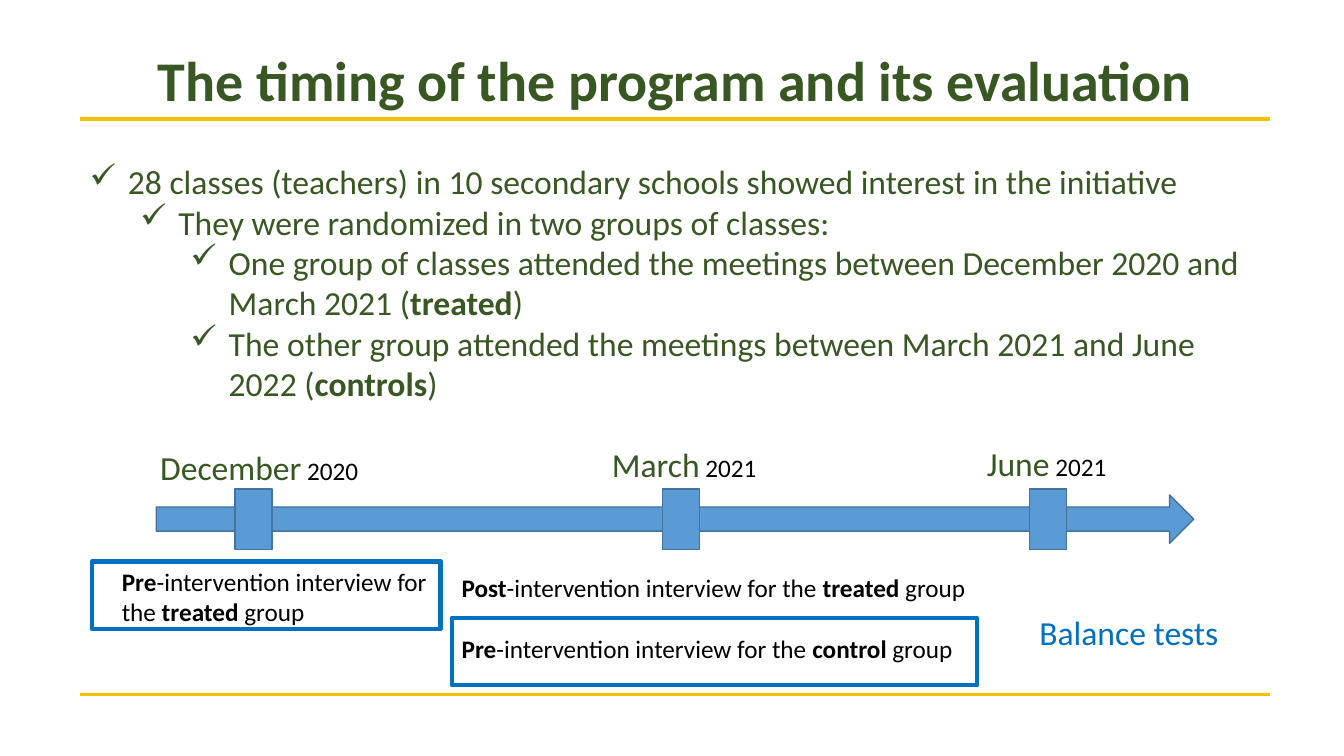
from dataclasses import dataclass

from lxml.etree import SubElement
from pptx import Presentation
from pptx.dml.color import RGBColor
from pptx.enum.shapes import MSO_CONNECTOR, MSO_SHAPE
from pptx.enum.text import MSO_ANCHOR, PP_ALIGN
from pptx.oxml.ns import qn
from pptx.util import Inches, Pt


@dataclass(frozen=True)
class Theme:
    """Colours, font and type sizes of the slide."""
    font: str = "Calibri"
    green: str = "385723"
    gold: str = "FFC000"
    blue: str = "5B9BD5"
    edge: str = "43739E"
    frame: str = "0070C0"
    black: str = "000000"
    title: int = 40
    body: int = 24
    note: int = 18


class Deck:
    """Draws styled elements on the current slide."""

    def __init__(self, theme):
        """Start a wide presentation with one blank slide."""
        self.theme = theme
        self.prs = Presentation()
        self.prs.slide_width, self.prs.slide_height = Inches(13.33), Inches(7.5)
        self.s = self.prs.slides.add_slide(self.prs.slide_layouts[6])

    def runs(self, p, text, size, color):
        """Add text to a paragraph, with the parts between asterisks in bold."""
        for i, part in enumerate(text.split("*")):
            if part:
                r = p.add_run()
                r.text = part
                r.font.name = self.theme.font
                r.font.size = Pt(size)
                r.font.bold = i % 2 == 1
                r.font.color.rgb = RGBColor.from_string(color)

    def text(self, x, y, w, h, lines, size, color):
        """Add a wrapping text box with one paragraph per line."""
        tf = self.s.shapes.add_textbox(Inches(x), Inches(y), Inches(w), Inches(h)).text_frame
        tf.word_wrap = True
        for i, line in enumerate(lines):
            p = tf.add_paragraph() if i else tf.paragraphs[0]
            self.runs(p, line, size, color)
        return tf

    def title(self, x, y, w, h, text):
        """Add the centred slide title."""
        tf = self.text(x, y, w, h, [f"*{text}*"], self.theme.title, self.theme.green)
        tf.vertical_anchor = MSO_ANCHOR.BOTTOM
        tf.margin_bottom = Inches(0.12)
        tf.paragraphs[0].alignment = PP_ALIGN.CENTER
        tf.paragraphs[0].line_spacing = 0.9

    def checklist(self, x, y, w, h, items):
        """Add check-marked paragraphs from (level, text) pairs."""
        tf = self.text(x, y, w, h, [text for _, text in items], self.theme.body, self.theme.green)
        for p, (level, _) in zip(tf.paragraphs, items):
            p.level = level
            pPr = p._p.get_or_add_pPr()
            pPr.set("marL", str(Inches(0.38 + 0.5 * level)))
            pPr.set("indent", str(-Inches(0.38)))
            SubElement(pPr, qn("a:buChar")).set("char", "✓")

    def rule(self, x1, x2, y):
        """Add a horizontal gold line."""
        c = self.s.shapes.add_connector(
            MSO_CONNECTOR.STRAIGHT, Inches(x1), Inches(y), Inches(x2), Inches(y))
        c.line.color.rgb = RGBColor.from_string(self.theme.gold)
        c.line.width = Pt(2.25)
        SubElement(c._element.spPr, qn("a:effectLst"))

    def shape(self, kind, x, y, w, h, line, width, fill=None):
        """Add an outlined preset shape, filled when a fill is given."""
        sp = self.s.shapes.add_shape(kind, Inches(x), Inches(y), Inches(w), Inches(h))
        sp.shadow.inherit = False
        sp.line.color.rgb = RGBColor.from_string(line)
        sp.line.width = Pt(width)
        if fill:
            sp.fill.solid()
            sp.fill.fore_color.rgb = RGBColor.from_string(fill)
        else:
            sp.fill.background()

    def bar(self, kind, x, y, w, h):
        """Add a blue timeline part."""
        self.shape(kind, x, y, w, h, self.theme.edge, 1, self.theme.blue)

    def box(self, x, y, w, h):
        """Add an empty blue frame."""
        self.shape(MSO_SHAPE.RECTANGLE, x, y, w, h, self.theme.frame, 3)

    def date(self, x, y, w, month, year):
        """Add a milestone label with a large month and a small year."""
        tf = self.text(x, y, w, 0.5, [month], self.theme.body, self.theme.green)
        self.runs(tf.paragraphs[0], f" {year}", self.theme.note, self.theme.black)


def main():
    """Build and save the slide."""
    theme = Theme()
    deck = Deck(theme)
    left, width = 0.79, 11.81

    deck.title(left, 0, width, 1.25, "The timing of the program and its evaluation")
    for y in (1.18, 6.89):
        deck.rule(left, left + width, y)
    deck.checklist(left, 1.55, width, 3.33, [
        (0, "28 classes (teachers) in 10 secondary schools showed interest in the initiative"),
        (1, "They were randomized in two groups of classes:"),
        (2, "One group of classes attended the meetings between December 2020 and March 2021 (*treated*)"),
        (2, "The other group attended the meetings between March 2021 and June 2022 (*controls*)"),
    ])

    deck.bar(MSO_SHAPE.RIGHT_ARROW, 1.55, 4.91, 10.29, 0.48)
    milestones = [
        (2.33, 1.49, 4.38, 2.32, "December", 2020),
        (6.57, 5.97, 4.35, 2.32, "March", 2021),
        (10.21, 9.69, 4.34, 1.63, "June", 2021),
    ]
    for mark_x, x, y, w, month, year in milestones:
        deck.bar(MSO_SHAPE.RECTANGLE, mark_x, 4.85, 0.37, 0.6)
        deck.date(x, y, w, month, year)

    deck.text(1.11, 5.57, 3.54, 0.71, ["*Pre*-intervention interview for the *treated* group"],
              theme.note, theme.black)
    tf = deck.text(4.48, 5.63, 5.51, 1.01, [
        "*Post*-intervention interview for the *treated* group",
        "*Pre*-intervention interview for the *control* group",
    ], theme.note, theme.black)
    tf.paragraphs[1].space_before = Pt(22)
    deck.box(0.91, 5.57, 3.46, 0.67)
    deck.text(10.21, 6.02, 2.22, 0.5, ["Balance tests"], theme.body, theme.frame)
    deck.box(4.48, 6.13, 5.21, 0.67)

    deck.prs.save("out.pptx")


if __name__ == "__main__":
    main()
